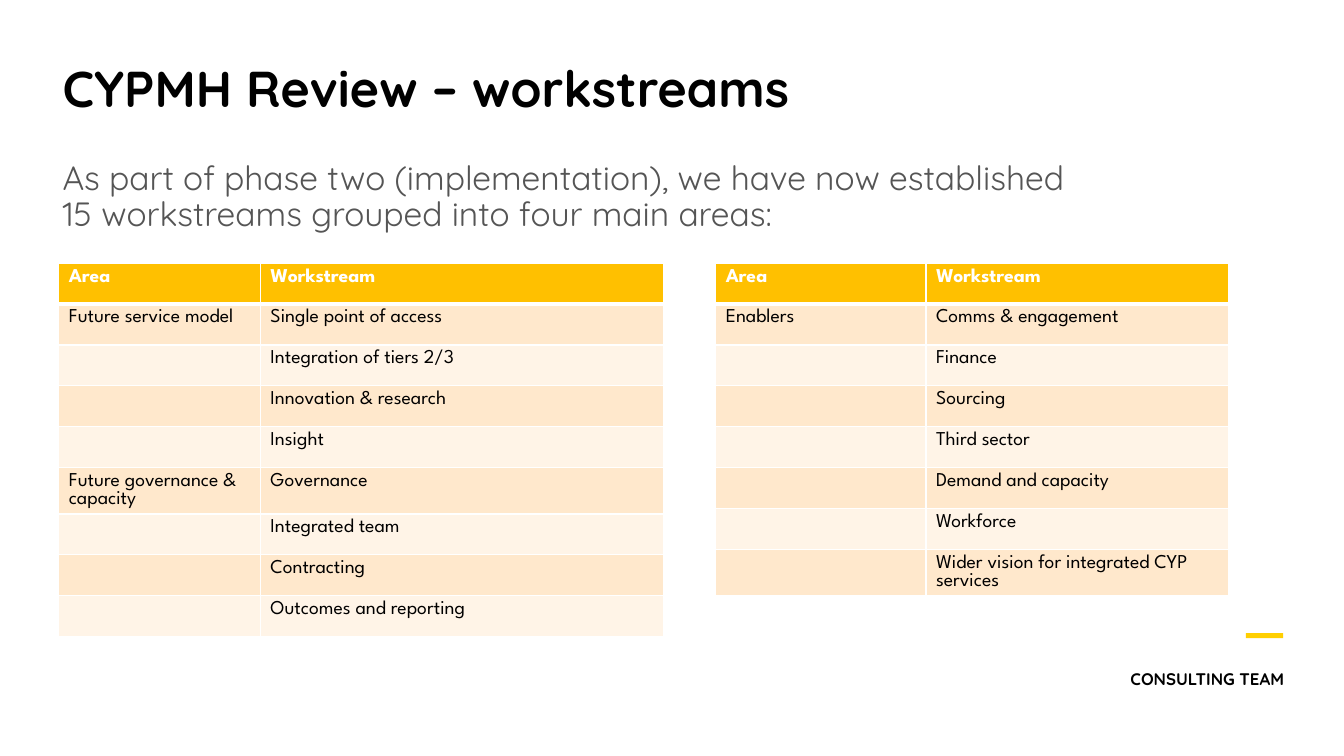
"""Build the slide that lists the review workstreams by area."""
from dataclasses import dataclass

from lxml.etree import SubElement
from pptx import Presentation
from pptx.dml.color import RGBColor
from pptx.enum.shapes import MSO_SHAPE as Preset
from pptx.enum.text import MSO_ANCHOR as Anchor, PP_ALIGN as Align
from pptx.oxml.ns import qn
from pptx.util import Pt

COLOURS = {
    "black": "000000",
    "white": "FFFFFF",
    "grey": "555555",
    "accent": "FFCF01",
    "header": "FFC000",
    "band_dark": "FFE8CC",
    "band_light": "FFF4E7",
}
HEADING_FONT = "Quicksand"
TABLE_FONT = "League Spartan"
TABLE_TOP = 188
ROW_HEIGHT = 29.2


@dataclass
class Label:
    text: str
    left: float
    top: float
    width: float
    height: float
    size: float
    colour: str
    bold: bool = False
    align: Align = Align.LEFT
    line_spacing: float = 1.0


@dataclass
class WorkstreamTable:
    left: float
    widths: tuple[float, float]
    areas: dict[str, list[str]]

    def rows(self) -> list[tuple[str, str]]:
        body = [
            (area if index == 0 else "", workstream)
            for area, workstreams in self.areas.items()
            for index, workstream in enumerate(workstreams)
        ]
        return [("Area", "Workstream")] + body


LABELS = [
    Label("CONSULTING TEAM", 789, 473.8, 135.4, 20.2, 12, "black", True, Align.RIGHT),
    Label("CYPMH Review – workstreams", 37.6, 42.5, 794, 67.7, 36, "black", True,
          line_spacing=0.9),
    Label("As part of phase two (implementation), we have now established "
          "15 workstreams grouped into four main areas:",
          37.6, 111.6, 751, 49, 24, "grey", line_spacing=0.9),
]
TABLES = [
    WorkstreamTable(42, (144, 288), {
        "Future service model": [
            "Single point of access", "Integration of tiers 2/3",
            "Innovation & research", "Insight",
        ],
        "Future governance & capacity": [
            "Governance", "Integrated team", "Contracting", "Outcomes and reporting",
        ],
    }),
    WorkstreamTable(511.2, (150.2, 216), {
        "Enablers": [
            "Comms & engagement", "Finance", "Sourcing", "Third sector",
            "Demand and capacity", "Workforce",
            "Wider vision for integrated CYP services",
        ],
    }),
]


def rgb(name: str) -> RGBColor:
    return RGBColor.from_string(COLOURS[name])


def style_runs(para, font: str, size: float, colour: str, bold: bool) -> None:
    for span in para.runs:
        span.font.name = font
        span.font.size = Pt(size)
        span.font.bold = bold
        span.font.color.rgb = rgb(colour)


def draw_label(page, label: Label) -> None:
    box = page.shapes.add_textbox(
        Pt(label.left), Pt(label.top), Pt(label.width), Pt(label.height))
    frame = box.text_frame
    frame.word_wrap = True
    frame.vertical_anchor = Anchor.TOP
    frame.text = label.text
    para = frame.paragraphs[0]
    para.alignment = label.align
    para.line_spacing = label.line_spacing
    style_runs(para, HEADING_FONT, label.size, label.colour, label.bold)


def draw_accent(page) -> None:
    bar = page.shapes.add_shape(Preset.RECTANGLE, Pt(890), Pt(452.2), Pt(26.6), Pt(3.6))
    bar.shadow.inherit = False
    bar.fill.solid()
    bar.fill.fore_color.rgb = rgb("accent")
    bar.line.fill.background()


def set_borders(cell, top: float, bottom: float) -> None:
    properties = cell._tc.get_or_add_tcPr()
    for tag, width in (("lnL", 1), ("lnR", 1), ("lnT", top), ("lnB", bottom)):
        line = SubElement(properties, qn(f"a:{tag}"), w=str(Pt(width)))
        fill = SubElement(line, qn("a:solidFill"))
        SubElement(fill, qn("a:srgbClr"), val=COLOURS["white"])


def draw_table(page, content: WorkstreamTable) -> None:
    rows = content.rows()
    table = page.shapes.add_table(
        len(rows), len(content.widths), Pt(content.left), Pt(TABLE_TOP),
        Pt(sum(content.widths)), Pt(ROW_HEIGHT * len(rows))).table
    for column, width in zip(table.columns, content.widths):
        column.width = Pt(width)
    for row_index, texts in enumerate(rows):
        table.rows[row_index].height = Pt(ROW_HEIGHT)
        is_header = row_index == 0
        band = "band_dark" if row_index % 2 else "band_light"
        for column_index, text in enumerate(texts):
            cell = table.cell(row_index, column_index)
            set_borders(cell, 3 if row_index == 1 else 1, 3 if is_header else 1)
            cell.fill.solid()
            cell.fill.fore_color.rgb = rgb("header" if is_header else band)
            cell.text_frame.text = text
            style_runs(cell.text_frame.paragraphs[0], TABLE_FONT, 14,
                       "white" if is_header else "black", is_header)


def main() -> None:
    deck = Presentation()
    deck.slide_width, deck.slide_height = Pt(960), Pt(540)
    page = deck.slides.add_slide(deck.slide_layouts[6])
    draw_accent(page)
    for content in TABLES:
        draw_table(page, content)
    for label in LABELS:
        draw_label(page, label)
    deck.save("out.pptx")


if __name__ == "__main__":
    main()
